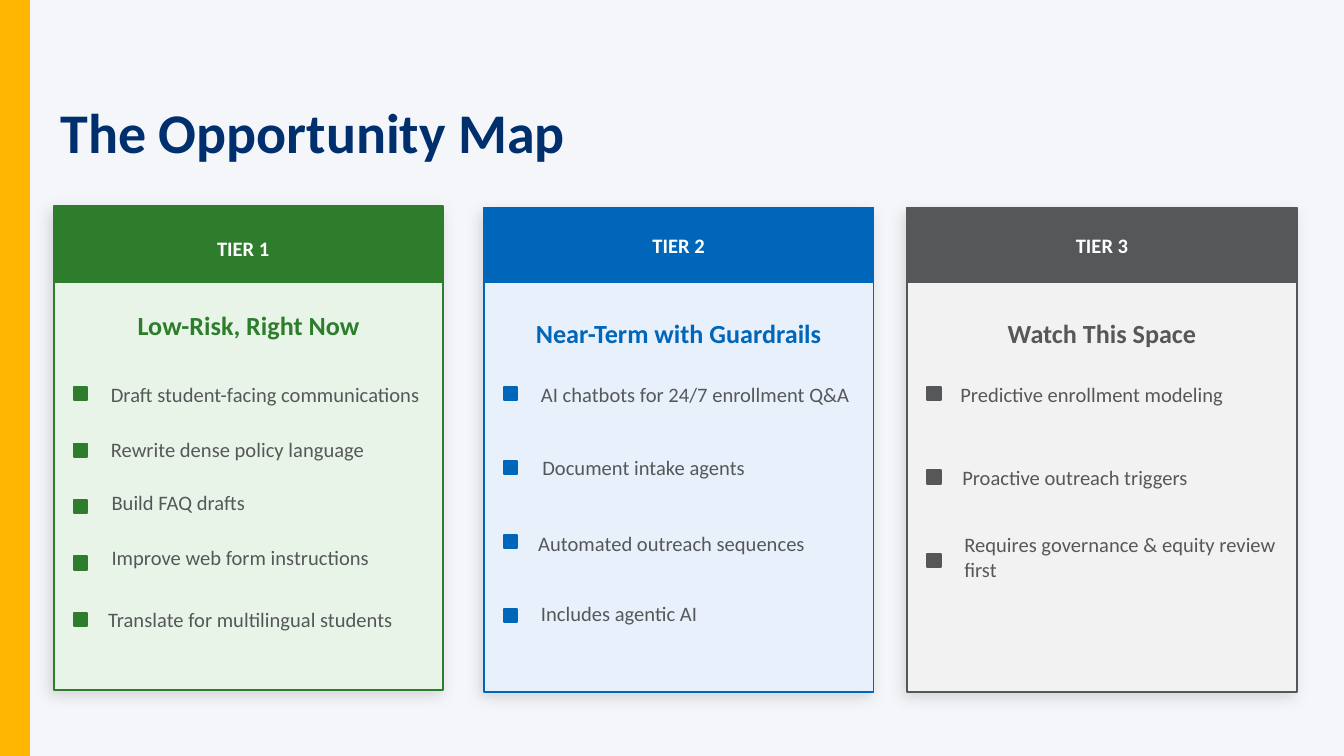
import pptx
import pptx.util
from lxml import etree
from pptx.dml.color import RGBColor
from pptx.enum.shapes import MSO_SHAPE
from pptx.enum.text import MSO_ANCHOR, PP_ALIGN
from pptx.oxml.ns import qn

PX = 4572  # EMU in one px, at 200 px to the inch
PAGE_WIDTH, PAGE_HEIGHT = 2000, 1125
CARD_WIDTH, CARD_HEIGHT = 580, 720
HEADER_TOP, HEADER_HEIGHT = 310, 110
NAME_HEIGHT, HEADING_HEIGHT = 90, 110
MARKER_TOP, MARKER_SIZE, MARKER_INDENT = 576, 20, 30
LABEL_WIDTH, LABEL_INSET = 496, 12
FONT = "Calibri"

COLORS = {
    "page": "F4F6F9", "accent": "FFB600", "title": "002F6D",
    "white": "FFFFFF", "body": "555759", "shadow": "000000",
    "green": "2D7D2D", "green_tint": "E8F4E8",
    "blue": "0066BA", "blue_tint": "E8F0FB",
    "gray": "555759", "gray_tint": "F2F2F2",
}

# Each item is its text, its indent from the card's left edge and its top.
TIERS = [
    {
        "name": "TIER 1", "heading": "Low-Risk, Right Now", "color": "green",
        "left": 80, "top": 307, "name_box": (324, 564), "heading_top": 429,
        "marker_step": 84, "label_height": 76,
        "items": [
            ("Draft student-facing communications", 73, 549),
            ("Rewrite dense policy language", 73, 630),
            ("Build FAQ drafts", 74, 710),
            ("Improve web form instructions", 74, 792),
            ("Translate for multilingual students", 69, 884),
        ],
    },
    {
        "name": "TIER 2", "heading": "Near-Term with Guardrails", "color": "blue",
        "left": 720, "top": 310, "name_box": (320, 580), "heading_top": 441,
        "marker_step": 110, "label_height": 90,
        "items": [
            ("AI chatbots for 24/7 enrollment Q&A", 73, 541),
            ("Document intake agents", 75, 650),
            ("Automated outreach sequences", 69, 764),
            ("Includes agentic AI", 73, 867),
        ],
    },
    {
        "name": "TIER 3", "heading": "Watch This Space", "color": "gray",
        "left": 1350, "top": 310, "name_box": (320, 580), "heading_top": 441,
        "marker_step": 124, "label_height": 110,
        "items": [
            ("Predictive enrollment modeling", 67, 532),
            ("Proactive outreach triggers", 70, 656),
            ("Requires governance & equity review first", 73, 774),
        ],
    },
]


def px(*lengths):
    return [pptx.util.Emu(length * PX) for length in lengths]


def rgb(name):
    return RGBColor.from_string(COLORS[name])


def add_rect(page, left, top, width, height, fill, line):
    rect = page.shapes.add_shape(MSO_SHAPE.RECTANGLE, *px(left, top, width, height))
    rect.shadow.inherit = False
    rect.fill.solid()
    rect.fill.fore_color.rgb = rgb(fill)
    rect.line.color.rgb = rgb(line)
    rect.line.width = pptx.util.Pt(1)
    return rect


def add_soft_shadow(shape):
    """Cast a faint shadow towards the lower left."""
    effects = shape._element.spPr.find(qn("a:effectLst"))
    shadow = etree.SubElement(
        effects, qn("a:outerShdw"), blurRad=str(pptx.util.Pt(8)),
        dist=str(pptx.util.Pt(3)), dir=str(135 * 60000), algn="bl", rotWithShape="0")
    color = etree.SubElement(shadow, qn("a:srgbClr"), val=COLORS["shadow"])
    etree.SubElement(color, qn("a:alpha"), val="12000")


def add_text(page, left, top, width, height, text, size, color,
             bold=False, align=PP_ALIGN.LEFT, inset=0):
    box = page.shapes.add_textbox(*px(left, top, width, height))
    frame = box.text_frame
    frame.word_wrap = True
    frame.vertical_anchor = MSO_ANCHOR.MIDDLE
    (frame.margin_left, frame.margin_top,
     frame.margin_right, frame.margin_bottom) = px(*[inset] * 4)
    para = frame.paragraphs[0]
    para.text = text
    para.alignment = align
    para.font.name = FONT
    para.font.size = pptx.util.Pt(size)
    para.font.bold = bold
    para.font.color.rgb = rgb(color)


def add_card(page, tier):
    left, color = tier["left"], tier["color"]
    card = add_rect(page, left, tier["top"], CARD_WIDTH, CARD_HEIGHT,
                    color + "_tint", color)
    add_soft_shadow(card)
    add_rect(page, left, HEADER_TOP, CARD_WIDTH, HEADER_HEIGHT, color, color)
    name_top, name_width = tier["name_box"]
    add_text(page, left, name_top, name_width, NAME_HEIGHT, tier["name"], 11,
             "white", bold=True, align=PP_ALIGN.CENTER)
    add_text(page, left, tier["heading_top"], CARD_WIDTH, HEADING_HEIGHT,
             tier["heading"], 14, color, bold=True, align=PP_ALIGN.CENTER)


def add_items(page, tier):
    left, color = tier["left"], tier["color"]
    for index, (text, indent, top) in enumerate(tier["items"]):
        add_text(page, left + indent, top, LABEL_WIDTH, tier["label_height"],
                 text, 11, "body", inset=LABEL_INSET)
        add_rect(page, left + MARKER_INDENT, MARKER_TOP + index * tier["marker_step"],
                 MARKER_SIZE, MARKER_SIZE, color, color)


def main():
    deck = pptx.Presentation()
    deck.slide_width, deck.slide_height = px(PAGE_WIDTH, PAGE_HEIGHT)
    page = deck.slides.add_slide(deck.slide_layouts[6])
    page.background.fill.solid()
    page.background.fill.fore_color.rgb = rgb("page")

    add_rect(page, 0, 0, 44, PAGE_HEIGHT, "accent", "accent")
    add_text(page, 90, 130, 1800, 130, "The Opportunity Map", 30, "title", bold=True)
    for tier in TIERS:
        add_card(page, tier)
        add_items(page, tier)
    deck.save("out.pptx")


if __name__ == "__main__":
    main()
